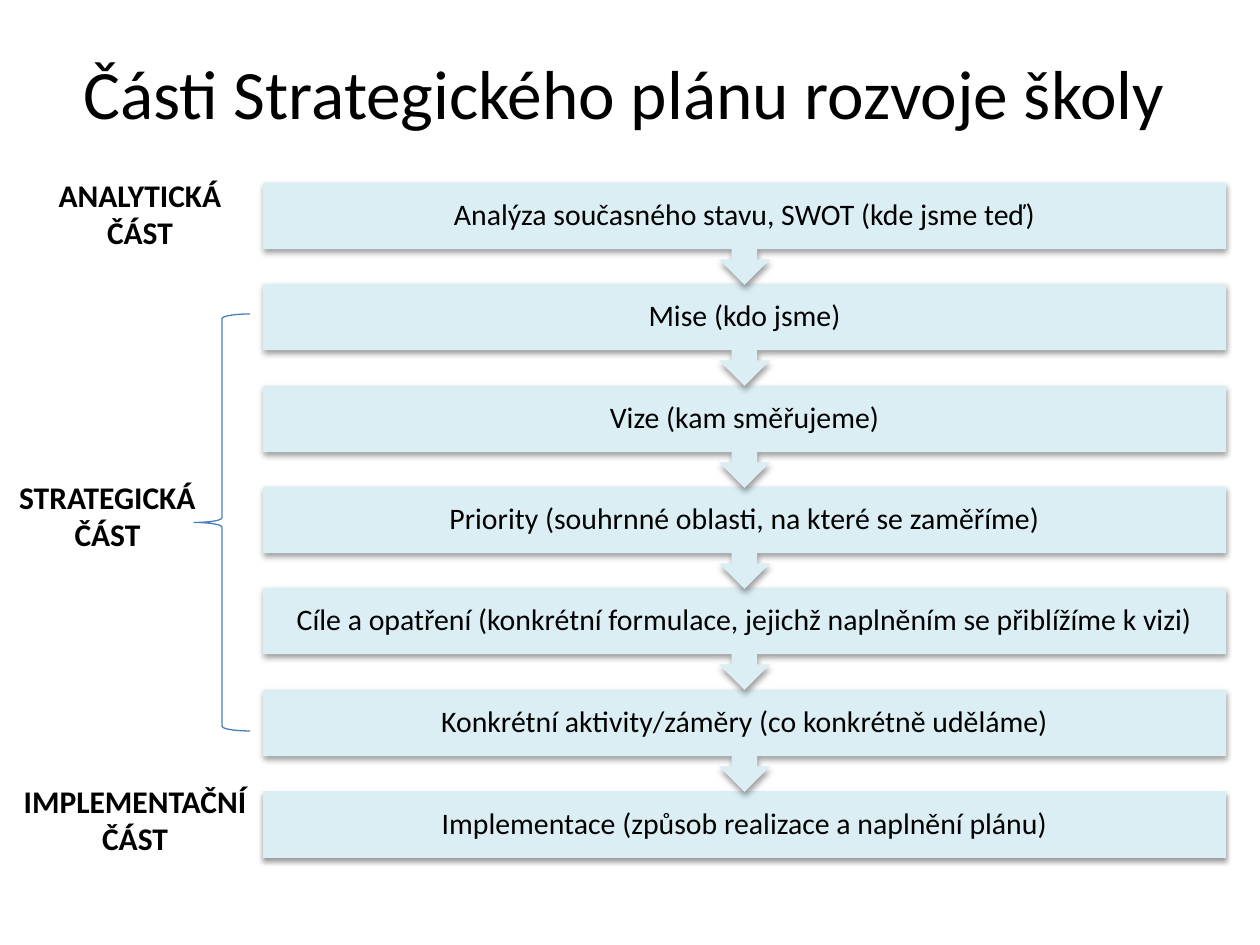
from lxml import etree
from pptx import Presentation
from pptx import util as u
from pptx.dml.color import RGBColor
from pptx.enum import shapes, text
from pptx.oxml.ns import qn

EMU_PER_PX = 914400 / 126
FONT = "Calibri"
COLORS = {"text": "000000", "box": "DBEEF4", "brace": "4B7EBC", "shadow": "000000"}

STEPS = [
    "Analýza současného stavu, SWOT (kde jsme teď)",
    "Mise (kdo jsme)",
    "Vize (kam směřujeme)",
    "Priority (souhrnné oblasti, na které se zaměříme)",
    "Cíle a opatření (konkrétní formulace, jejichž naplněním se přiblížíme k vizi)",
    "Konkrétní aktivity/záměry (co konkrétně uděláme)",
    "Implementace (způsob realizace a naplnění plánu)",
]
STEP_LEFT, STEP_WIDTH = 263, 963
FIRST_TOP, LAST_TOP = 183, 791
BOX_HEIGHT, CALLOUT_HEIGHT = 67, 102

# Name of the part, then left, top, width, height
PARTS = [
    ("ANALYTICKÁ", (45, 169, 190, 89)),
    ("STRATEGICKÁ", (6, 471, 203, 89)),
    ("IMPLEMENTAČNÍ", (11, 775, 248, 89)),
]


def px(*lengths):
    return [u.Emu(round(length * EMU_PER_PX)) for length in lengths]


def color(name):
    return RGBColor.from_string(COLORS[name])


def write_text(shape, lines, size, bold=False, wrap=True, inset=None, spacing=None):
    frame = shape.text_frame
    frame.word_wrap = wrap
    frame.vertical_anchor = text.MSO_ANCHOR.MIDDLE
    if inset is not None:
        margin, = px(inset)
        frame.margin_left = frame.margin_right = margin
        frame.margin_top = frame.margin_bottom = margin
    for index, line in enumerate(lines):
        paragraph = frame.paragraphs[0] if index == 0 else frame.add_paragraph()
        paragraph.alignment = text.PP_ALIGN.CENTER
        paragraph.line_spacing = spacing
        run = paragraph.add_run()
        run.text = line
        run.font.name = FONT
        run.font.size = u.Pt(size)
        run.font.bold = bold
        run.font.color.rgb = color("text")


def add_soft_shadow(shape):
    shape.shadow.inherit = False
    effects = shape._element.spPr.find(qn("a:effectLst"))
    shadow = etree.SubElement(
        effects, qn("a:outerShdw"), blurRad=str(u.Pt(3.1)), dist=str(u.Pt(1.6)),
        dir="5400000", rotWithShape="0")
    shade = etree.SubElement(shadow, qn("a:srgbClr"), val=COLORS["shadow"])
    etree.SubElement(shade, qn("a:alpha"), val="38000")


def add_step(slide, label, top, is_last):
    kind = shapes.MSO_SHAPE.RECTANGLE if is_last else shapes.MSO_SHAPE.DOWN_ARROW_CALLOUT
    height = BOX_HEIGHT if is_last else CALLOUT_HEIGHT
    step = slide.shapes.add_shape(kind, *px(STEP_LEFT, top, STEP_WIDTH, height))
    step.fill.solid()
    step.fill.fore_color.rgb = color("box")
    step.line.fill.background()
    add_soft_shadow(step)
    write_text(step, [label], size=17, inset=16, spacing=0.9)


def add_part_label(slide, name, box):
    label = slide.shapes.add_textbox(*px(*box))
    write_text(label, [name, "ČÁST"], size=18, bold=True, wrap=False)


def add_brace(slide, box):
    brace = slide.shapes.add_shape(shapes.MSO_SHAPE.LEFT_BRACE, *px(*box))
    brace.shadow.inherit = False
    brace.fill.background()
    brace.line.color.rgb = color("brace")
    brace.line.width = u.Pt(0.75)


def main():
    presentation = Presentation()
    presentation.slide_width, presentation.slide_height = px(1260, 945)
    slide = presentation.slides.add_slide(presentation.slide_layouts[5])

    # Title
    title = slide.shapes.title
    title.left, title.top, title.width, title.height = px(44, 38, 1160, 107)
    write_text(title, ["Části Strategického plánu rozvoje školy"], size=39.6)

    # Flow of steps, drawn from the bottom so each arrow lies over the next box
    last = len(STEPS) - 1
    pitch = (LAST_TOP - FIRST_TOP) / last
    for index in range(last, -1, -1):
        add_step(slide, STEPS[index], round(FIRST_TOP + index * pitch), index == last)

    # Parts of the plan at the left
    for name, box in PARTS:
        add_part_label(slide, name, box)
    add_brace(slide, (194, 314, 56, 417))

    presentation.save("out.pptx")


if __name__ == "__main__":
    main()
